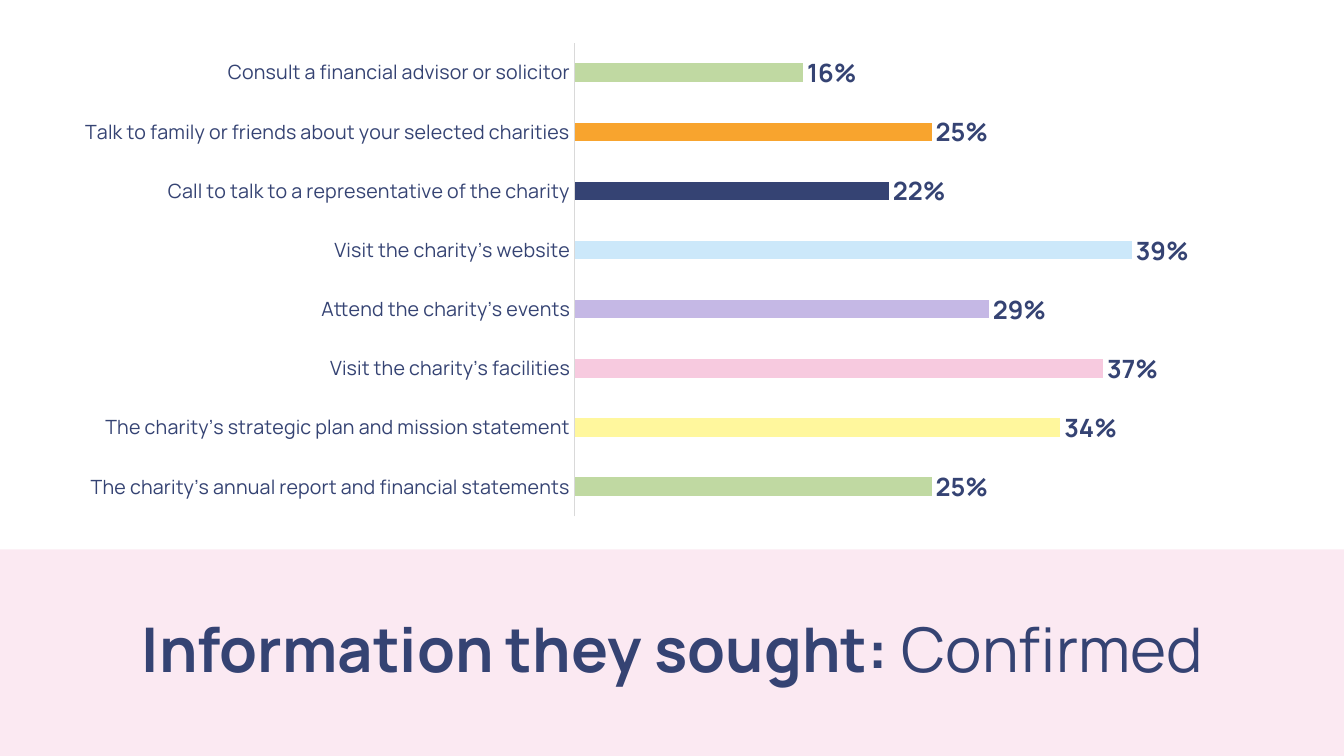
from dataclasses import dataclass

from lxml.etree import SubElement
from pptx import Presentation
from pptx.chart.data import CategoryChartData
from pptx.dml.color import RGBColor
from pptx.enum.chart import XL_CHART_TYPE as ChartType
from pptx.enum.chart import XL_LABEL_POSITION as LabelPos
from pptx.enum.chart import XL_TICK_LABEL_POSITION as TickLabelPos
from pptx.enum.chart import XL_TICK_MARK as TickMark
from pptx.enum.shapes import MSO_SHAPE as Shape
from pptx.enum.text import MSO_ANCHOR as Anchor
from pptx.enum.text import PP_ALIGN as Align
from pptx.oxml.ns import qn
from pptx.util import Inches, Pt


@dataclass(frozen=True)
class Theme:
    font: str = "Manrope"
    navy: str = "354373"
    pink: str = "F7CADF"
    green: str = "C0D9A2"
    yellow: str = "FFF79D"
    lilac: str = "C5B8E5"
    sky: str = "CCE8FA"
    orange: str = "F8A42E"
    axis: str = "D9D9D9"
    title_size: int = 44
    value_size: int = 18
    label_size: int = 14


THEME = Theme()

SOURCES = [
    ("The charity’s annual report and financial statements", 0.25, THEME.green),
    ("The charity’s strategic plan and mission statement", 0.34, THEME.yellow),
    ("Visit the charity’s facilities", 0.37, THEME.pink),
    ("Attend the charity’s events", 0.29, THEME.lilac),
    ("Visit the charity’s website", 0.39, THEME.sky),
    ("Call to talk to a representative of the charity", 0.22, THEME.navy),
    ("Talk to family or friends about your selected charities", 0.25, THEME.orange),
    ("Consult a financial advisor or solicitor", 0.16, THEME.green),
]


def rgb(color):
    return RGBColor.from_string(color)


def paint(fill, color):
    fill.solid()
    fill.fore_color.rgb = rgb(color)


def style_font(font, size, bold=False):
    font.name = THEME.font
    font.size = Pt(size)
    font.bold = bold
    font.color.rgb = rgb(THEME.navy)


def add_band(slide, left, top, width, height, color, opacity):
    sp = slide.shapes.add_shape(
        Shape.RECTANGLE, Inches(left), Inches(top), Inches(width), Inches(height)
    )
    sp.shadow.inherit = False
    sp.line.fill.background()
    paint(sp.fill, color)
    srgb = sp.fill._xPr.find(qn("a:solidFill")).find(qn("a:srgbClr"))
    SubElement(srgb, qn("a:alpha")).set("val", str(opacity * 1000))


def add_title(slide, left, top, width, height, parts):
    sp = slide.shapes.add_textbox(
        Inches(left), Inches(top), Inches(width), Inches(height)
    )
    tf = sp.text_frame
    tf.word_wrap = True
    tf.vertical_anchor = Anchor.MIDDLE
    p = tf.paragraphs[0]
    p.alignment = Align.CENTER
    p.line_spacing = 0.9
    for text, bold in parts:
        r = p.add_run()
        r.text = text
        style_font(r.font, THEME.title_size, bold)


def style_axes(chart):
    categories = chart.category_axis
    categories.major_tick_mark = TickMark.NONE
    categories.tick_label_position = TickLabelPos.NEXT_TO_AXIS
    categories.has_major_gridlines = False
    categories.format.line.color.rgb = rgb(THEME.axis)
    categories.format.line.width = Pt(0.75)
    style_font(categories.tick_labels.font, THEME.label_size)
    values = chart.value_axis
    values.minimum_scale = 0
    values.maximum_scale = 0.45
    values.has_major_gridlines = False
    values.visible = False


def add_bar_chart(slide, left, top, width, height, rows):
    data = CategoryChartData(number_format="#,##0%")
    data.categories = [label for label, _, _ in rows]
    data.add_series("Series 1", [value for _, value, _ in rows])
    chart = slide.shapes.add_chart(
        ChartType.BAR_CLUSTERED,
        Inches(left), Inches(top), Inches(width), Inches(height),
        data,
    ).chart
    chart.has_title = False
    chart.has_legend = False
    style_font(chart.font, THEME.label_size)
    style_axes(chart)

    plot = chart.plots[0]
    plot.gap_width = 219
    plot.vary_by_categories = False
    series = plot.series[0]
    paint(series.format.fill, THEME.navy)
    for i, (_, _, color) in enumerate(rows):
        paint(series.points[i].format.fill, color)

    labels = series.data_labels
    labels.show_value = True
    labels.position = LabelPos.OUTSIDE_END
    labels.number_format = "#,##0%"
    labels.number_format_is_linked = False
    style_font(labels.font, THEME.value_size, True)


def main():
    prs = Presentation()
    prs.slide_width = Inches(13.33)
    prs.slide_height = Inches(7.5)
    s = prs.slides.add_slide(prs.slide_layouts[6])
    add_band(s, 0, 5.45, 13.33, 2.05, THEME.pink, 40)
    add_title(
        s, 0.92, 5.68, 11.5, 1.59,
        [("Information they sought: ", True), ("Confirmed", False)],
    )
    add_bar_chart(s, 0.61, 0.33, 11.7, 4.89, SOURCES)
    prs.save("out.pptx")


if __name__ == "__main__":
    main()
